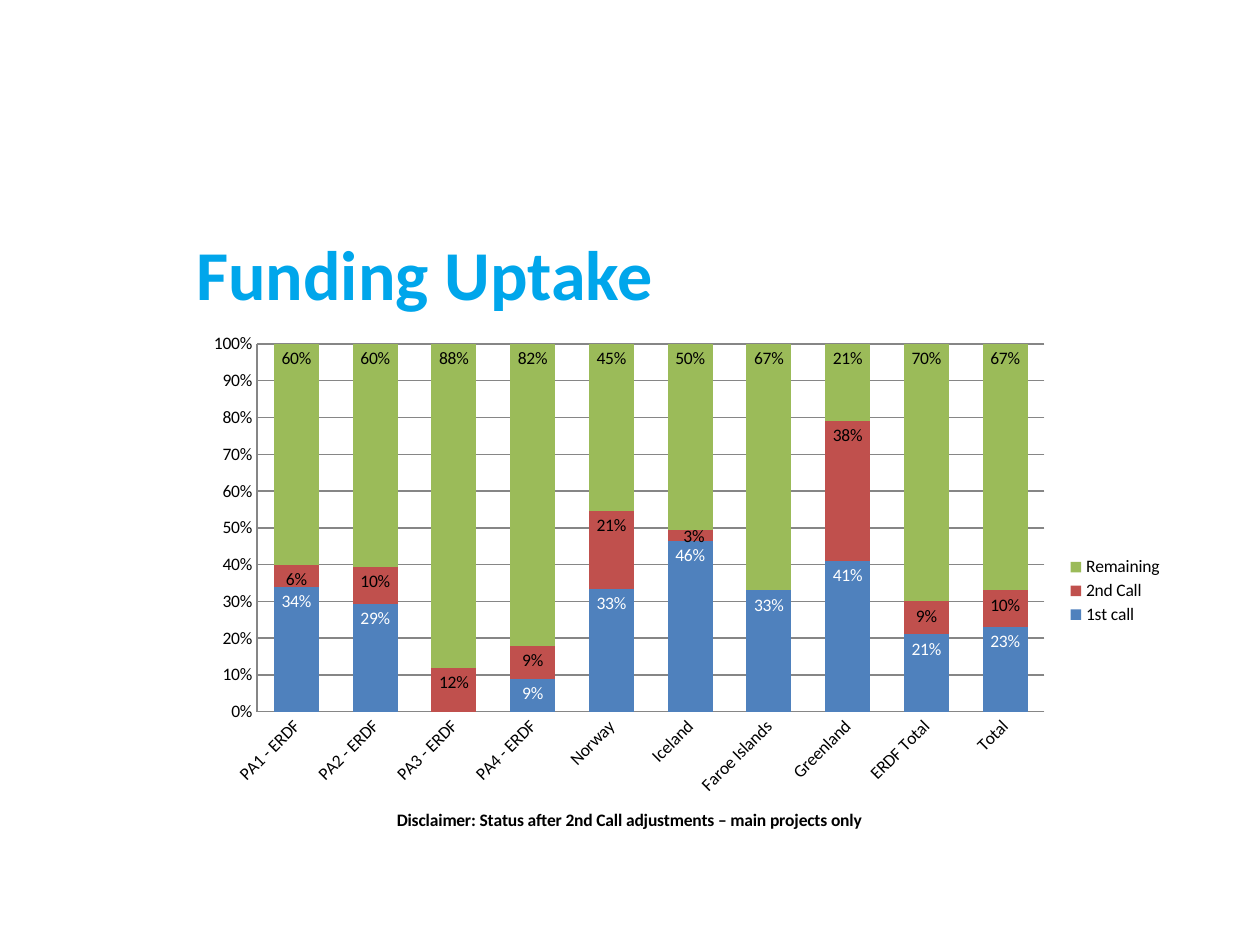
from lxml import etree
from pptx import Presentation
from pptx.chart.data import CategoryChartData
from pptx.dml.color import RGBColor
from pptx.enum.chart import XL_CHART_TYPE, XL_LABEL_POSITION, XL_LEGEND_POSITION, XL_TICK_MARK
from pptx.enum.text import MSO_ANCHOR
from pptx.oxml.ns import qn
from pptx.util import Inches, Pt

STACKED = XL_CHART_TYPE.COLUMN_STACKED_100
INSIDE_END = XL_LABEL_POSITION.INSIDE_END
LEGEND_RIGHT = XL_LEGEND_POSITION.RIGHT
NO_TICK = XL_TICK_MARK.NONE
MIDDLE = MSO_ANCHOR.MIDDLE

FONT = "Calibri"
COLORS = {
    "title": "00A6EB",
    "text": "000000",
    "light text": "FFFFFF",
    "grid": "868686",
    "1st call": "4F81BD",
    "2nd Call": "C0504D",
    "Remaining": "9BBB59",
}
CATEGORIES = ["PA1 - ERDF", "PA2 - ERDF", "PA3 - ERDF", "PA4 - ERDF", "Norway",
              "Iceland", "Faroe Islands", "Greenland", "ERDF Total", "Total"]
SHARES = {
    "1st call": [0.34, 0.29, None, 0.09, 0.33, 0.46, 0.33, 0.41, 0.21, 0.23],
    "2nd Call": [0.06, 0.1, 0.12, 0.09, 0.21, 0.03, None, 0.38, 0.09, 0.1],
    "Remaining": [0.6, 0.6, 0.88, 0.82, 0.45, 0.5, 0.67, 0.21, 0.7, 0.67],
}
DISCLAIMER = "Disclaimer: Status after 2nd Call adjustments – main projects only"
CHART_WIDTH, CHART_HEIGHT = 7.8, 4.25


def color(name):
    return RGBColor.from_string(COLORS[name])


def style_font(font, size, color_name, bold=False):
    font.name = FONT
    font.size = Pt(size)
    font.bold = bold
    font.color.rgb = color(color_name)


def add_title(slide, text, left, top, width, height):
    box = slide.shapes.add_textbox(Inches(left), Inches(top), Inches(width), Inches(height))
    frame = box.text_frame
    frame.word_wrap = True
    frame.vertical_anchor = MIDDLE
    frame.text = text
    style_font(frame.paragraphs[0].font, 40, "title", bold=True)


def set_layout(parent, index, inner=False, **inches):
    """Place a chart part by x, y, w and h; x and y alone shift it from its usual place."""
    for old_layout in parent.findall(qn("c:layout")):
        parent.remove(old_layout)
    layout = etree.Element(qn("c:layout"))
    manual = etree.SubElement(layout, qn("c:manualLayout"))
    if inner:
        etree.SubElement(manual, qn("c:layoutTarget"), val="inner")
    if "w" in inches:
        for key in ("x", "y"):
            etree.SubElement(manual, qn(f"c:{key}Mode"), val="edge")
    for key, length in inches.items():
        full_length = CHART_WIDTH if key in "xw" else CHART_HEIGHT
        etree.SubElement(manual, qn(f"c:{key}"), val=str(length / full_length))
    parent.insert(index, layout)


def style_axes(chart):
    category_axis, value_axis = chart.category_axis, chart.value_axis
    for axis in (category_axis, value_axis):
        axis.major_tick_mark = axis.minor_tick_mark = NO_TICK
        axis.format.line.color.rgb = color("grid")
        style_font(axis.tick_labels.font, 10, "text")
    value_axis.minimum_scale, value_axis.maximum_scale = 0, 1
    value_axis.major_unit = 0.1
    value_axis.tick_labels.number_format = "0%"
    value_axis.tick_labels.number_format_is_linked = False
    value_axis.has_major_gridlines = True
    value_axis.major_gridlines.format.line.color.rgb = color("grid")
    category_axis.has_major_gridlines = False

    title_frame = category_axis.axis_title.text_frame
    title_frame.text = DISCLAIMER
    style_font(title_frame.paragraphs[0].font, 10, "text", bold=True)
    for body in chart._chartSpace.xpath(".//c:catAx/c:txPr/a:bodyPr"):
        body.set("rot", "-2700000")
        body.set("vert", "horz")


def style_series(series):
    series.format.fill.solid()
    series.format.fill.fore_color.rgb = color(series.name)
    labels = series.data_labels
    labels.show_value = True
    labels.position = INSIDE_END
    labels.number_format = "0%"
    labels.number_format_is_linked = False
    style_font(labels.font, 10, "light text" if series.name == "1st call" else "text")


def shift_label(chart, series_name, category, x, y):
    """Move one value label so that it stays inside its thin segment."""
    series = next(series for series in chart.plots[0].series if series.name == series_name)
    label = series.points[CATEGORIES.index(category)].data_label
    style_font(label.font, 10, "text")
    label.position = INSIDE_END
    label_element, = series.data_labels._element.findall(qn("c:dLbl"))
    set_layout(label_element, 1, x=x, y=y)


def add_uptake_chart(slide, left, top):
    data = CategoryChartData(number_format="0%")
    data.categories = CATEGORIES
    for name, values in SHARES.items():
        data.add_series(name, values)
    chart = slide.shapes.add_chart(STACKED, Inches(left), Inches(top),
                                   Inches(CHART_WIDTH), Inches(CHART_HEIGHT), data).chart
    chart.has_title = False
    style_font(chart.font, 10, "text")
    plot = chart.plots[0]
    plot.gap_width, plot.overlap = 75, 100
    plot.vary_by_categories = False
    for series in plot.series:
        style_series(series)
    shift_label(chart, "2nd Call", "Iceland", x=0.03, y=-0.06)
    style_axes(chart)

    chart.has_legend = True
    chart.legend.position = LEGEND_RIGHT
    chart.legend.include_in_layout = False
    style_font(chart.legend.font, 10, "text")
    plot_area, = chart._chartSpace.xpath(".//c:plotArea")
    legend, = chart._chartSpace.xpath(".//c:legend")
    set_layout(plot_area, 0, inner=True, x=0.5, y=0.16, w=6.25, h=2.92)
    set_layout(legend, 1, x=6.88, y=1.82, w=0.86, h=0.6)


def main():
    presentation = Presentation()
    presentation.slide_width, presentation.slide_height = Inches(10), Inches(7.5)
    slide = presentation.slides.add_slide(presentation.slide_layouts[6])
    add_title(slide, "Funding Uptake", 1.46, 1.75, 7.09, 0.82)
    add_uptake_chart(slide, 1.54, 2.57)
    presentation.save("out.pptx")


if __name__ == "__main__":
    main()
